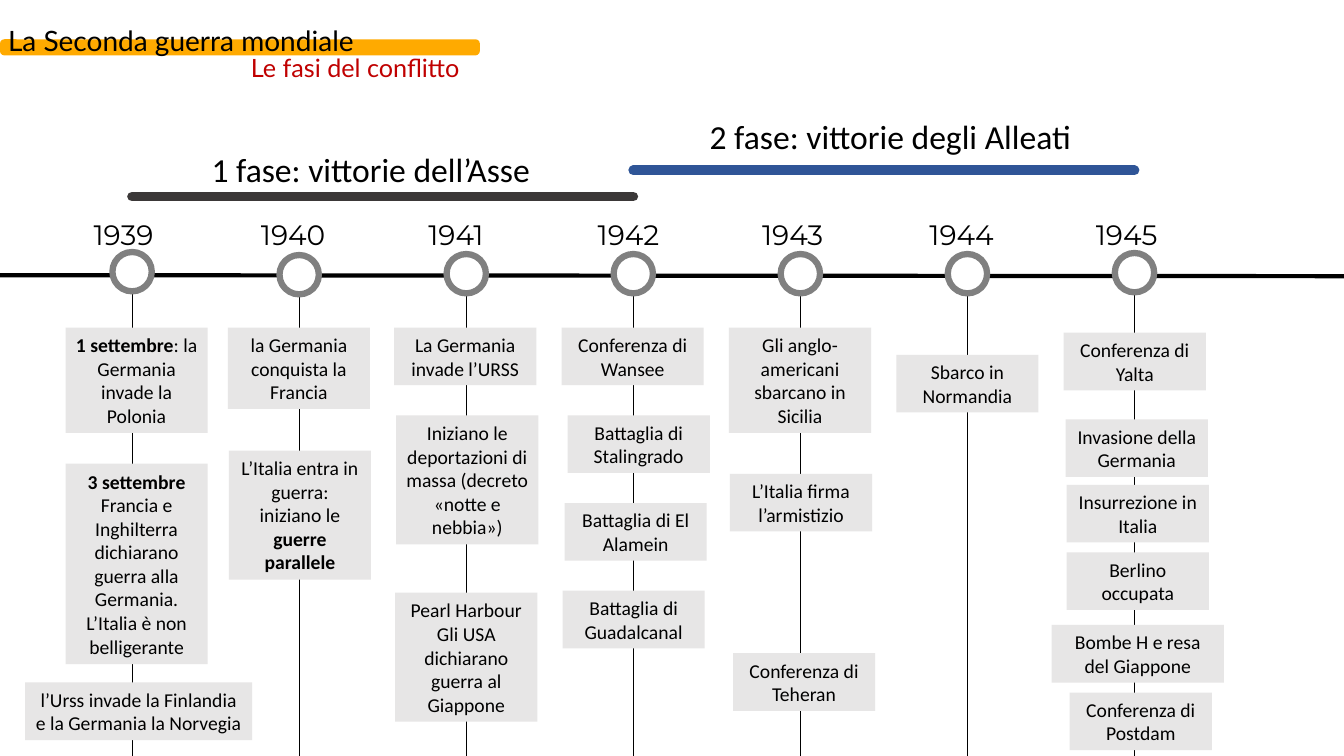
from lxml import etree
from pptx import Presentation
from pptx.dml.color import RGBColor
from pptx.enum.shapes import MSO_CONNECTOR, MSO_SHAPE
from pptx.enum.text import MSO_ANCHOR, MSO_AUTO_SIZE, PP_ALIGN
from pptx.oxml.ns import qn
from pptx.util import Inches, Pt

LINE = MSO_CONNECTOR.STRAIGHT
BAR, RECT, RING = (MSO_SHAPE.ROUNDED_RECTANGLE, MSO_SHAPE.RECTANGLE,
                   MSO_SHAPE.FLOWCHART_CONNECTOR)
TOP, MIDDLE = MSO_ANCHOR.TOP, MSO_ANCHOR.MIDDLE
LEFT, CENTER = PP_ALIGN.LEFT, PP_ALIGN.CENTER
FIXED = MSO_AUTO_SIZE.NONE

COLORS = {"black": "000000", "white": "FFFFFF", "gold": "FFAA00", "red": "C00000",
          "gray": "808080", "card": "E7E6E6", "axis": "3B3838", "allies": "2F5597"}
WIDTH, HEIGHT = 13.33, 7.5
FIRST, STEP = 1.31, 1.657
SIZE = 0.39
CARD = 1.41

# Year, label left, ring top, cards; a card is left, top, width, line count, text
YEARS = [
    ("1939", 0.83, 2.5, [
        (0.65, 3.25, CARD, 4, "**1 settembre**: la Germania invade la Polonia"),
        (0.65, 4.6, CARD, 8, "**3 settembre**\nFrancia e Inghilterra dichiarano guerra "
                             "alla Germania. L’Italia è non belligerante"),
        (0.25, 6.77, 2.25, 2, "l’Urss invade la Finlandia e la Germania la Norvegia")]),
    ("1940", 2.49, 2.53, [
        (2.26, 3.25, CARD, 3, "la Germania conquista la Francia"),
        (2.27, 4.47, CARD, 5, "L’Italia entra in guerra: iniziano le **guerre parallele**")]),
    ("1941", 4.15, 2.52, [
        (3.91, 3.25, CARD, 2, "La Germania invade l’URSS"),
        (3.93, 4.12, CARD, 5, "Iniziano le deportazioni di massa (decreto «notte e nebbia»)"),
        (3.92, 5.88, CARD, 5, "Pearl Harbour\nGli USA dichiarano guerra al Giappone")]),
    ("1942", 5.83, 2.52, [
        (5.57, 3.25, CARD, 2, "Conferenza di Wansee"),
        (5.63, 4.12, CARD, 2, "Battaglia di Stalingrado"),
        (5.6, 4.99, CARD, 2, "Battaglia di El Alamein"),
        (5.58, 5.86, CARD, 2, "Battaglia di Guadalcanal")]),
    ("1943", 7.46, 2.52, [
        (7.23, 3.25, CARD, 4, "Gli anglo-americani sbarcano in Sicilia"),
        (7.24, 4.7, CARD, 2, "L’Italia firma l’armistizio"),
        (7.27, 6.48, CARD, 2, "Conferenza di Teheran")]),
    ("1944", 9.12, 2.52, [
        (8.89, 3.52, CARD, 2, "Sbarco in Normandia")]),
    ("1945", 10.77, 2.51, [
        (10.55, 3.3, CARD, 2, "Conferenza di Yalta"),
        (10.57, 4.16, CARD, 2, "Invasione della Germania"),
        (10.58, 4.81, CARD, 2, "Insurrezione in Italia"),
        (10.58, 5.48, CARD, 2, "Berlino occupata"),
        (10.43, 6.2, 1.71, 2, "Bombe H e resa del Giappone"),
        (10.61, 6.87, CARD, 2, "Conferenza di Postdam")]),
]


def color(name):
    return RGBColor.from_string(COLORS[name])


class Board:
    """Holds the slide and draws each kind of element in its style."""

    def __init__(self, slide):
        self.slide = slide
        self.shapes = slide.shapes

    def put_text(self, shape, text, size, font, tint="black", align=LEFT, anchor=TOP):
        """Fill a shape with text; ** marks bold and a line break a paragraph."""
        frame = shape.text_frame
        frame.word_wrap = True
        frame.auto_size = FIXED
        frame.vertical_anchor = anchor
        for i, line in enumerate(text.split("\n")):
            para = frame.add_paragraph() if i else frame.paragraphs[0]
            para.alignment = align
            para.font.size = Pt(size)
            para.font.name = font
            para.font.color.rgb = color(tint)
            for j, part in enumerate(line.split("**")):
                if part:
                    run = para.add_run()
                    run.text = part
                    if j % 2:
                        run.font.bold = True

    def title(self, text, left, top, width, height):
        box = self.shapes.title
        box.left, box.top = Inches(left), Inches(top)
        box.width, box.height = Inches(width), Inches(height)
        self.put_text(box, text, 20, "Lato")
        return box

    def label(self, text, left, top, width, height, size, font, tint="black"):
        box = self.shapes.add_textbox(Inches(left), Inches(top),
                                      Inches(width), Inches(height))
        self.put_text(box, text, size, font, tint)

    def block(self, kind, left, top, width, height, fill):
        shape = self.shapes.add_shape(kind, Inches(left), Inches(top),
                                      Inches(width), Inches(height))
        shape.shadow.inherit = False
        shape.fill.solid()
        shape.fill.fore_color.rgb = color(fill)
        shape.line.fill.background()
        return shape

    def ring(self, mid, top):
        ring = self.block(RING, mid - SIZE / 2, top, SIZE, SIZE, "white")
        ring.line.color.rgb = color("gray")
        ring.line.width = Pt(4.5)

    def card(self, left, top, width, lines, text):
        height = 0.1 + 0.236 * lines
        box = self.block(RECT, left, top, width, height, "card")
        self.put_text(box, text, 14, "Calibri", align=CENTER, anchor=MIDDLE)

    def line(self, x1, y1, x2, y2, tint, width, rounded=False):
        line = self.shapes.add_connector(LINE, Inches(x1), Inches(y1),
                                         Inches(x2), Inches(y2))
        line.line.color.rgb = color(tint)
        line.line.width = Pt(width)
        props = line.element.spPr
        etree.SubElement(props, qn("a:effectLst"))
        if rounded:
            props.find(qn("a:ln")).set("cap", "rnd")


def main():
    deck = Presentation()
    deck.slide_width, deck.slide_height = Inches(WIDTH), Inches(HEIGHT)
    board = Board(deck.slides.add_slide(deck.slide_layouts[5]))

    title = board.title("La Seconda guerra mondiale", -0.02, 0.18, 3.89, 0.44)
    band = board.block(BAR, 0, 0.39, 4.76, 0.16, "gold")
    band.adjustments[0] = 0.27
    title.element.addprevious(band.element)
    board.label("Le fasi del conflitto", 2.39, 0.47, 2.35, 0.4, 18, "Lato", "red")

    mids = [FIRST + STEP * i for i in range(len(YEARS))]
    for mid, (_, _, top, _) in zip(mids, YEARS):
        board.line(mid, top + SIZE, mid, HEIGHT, "black", 0.5)
    board.line(0, 2.73, WIDTH, 2.74, "black", 3)

    for mid, (year, left, top, cards) in zip(mids, YEARS):
        board.ring(mid, top)
        board.label(year, left, 2.11, 0.95, 0.44, 20, "Montserrat")
        for card in cards:
            board.card(*card)

    board.line(mids[0], 1.95, mids[3], 1.95, "axis", 7, rounded=True)
    board.line(mids[3], 1.69, mids[6], 1.69, "allies", 7, rounded=True)
    board.label("1 fase: vittorie dell’Asse", 2, 1.43, 3.4, 0.5, 24, "Calibri")
    board.label("2 fase: vittorie degli Alleati", 6.94, 1.1, 3.83, 0.5, 24, "Calibri")
    deck.save("out.pptx")


if __name__ == "__main__":
    main()
